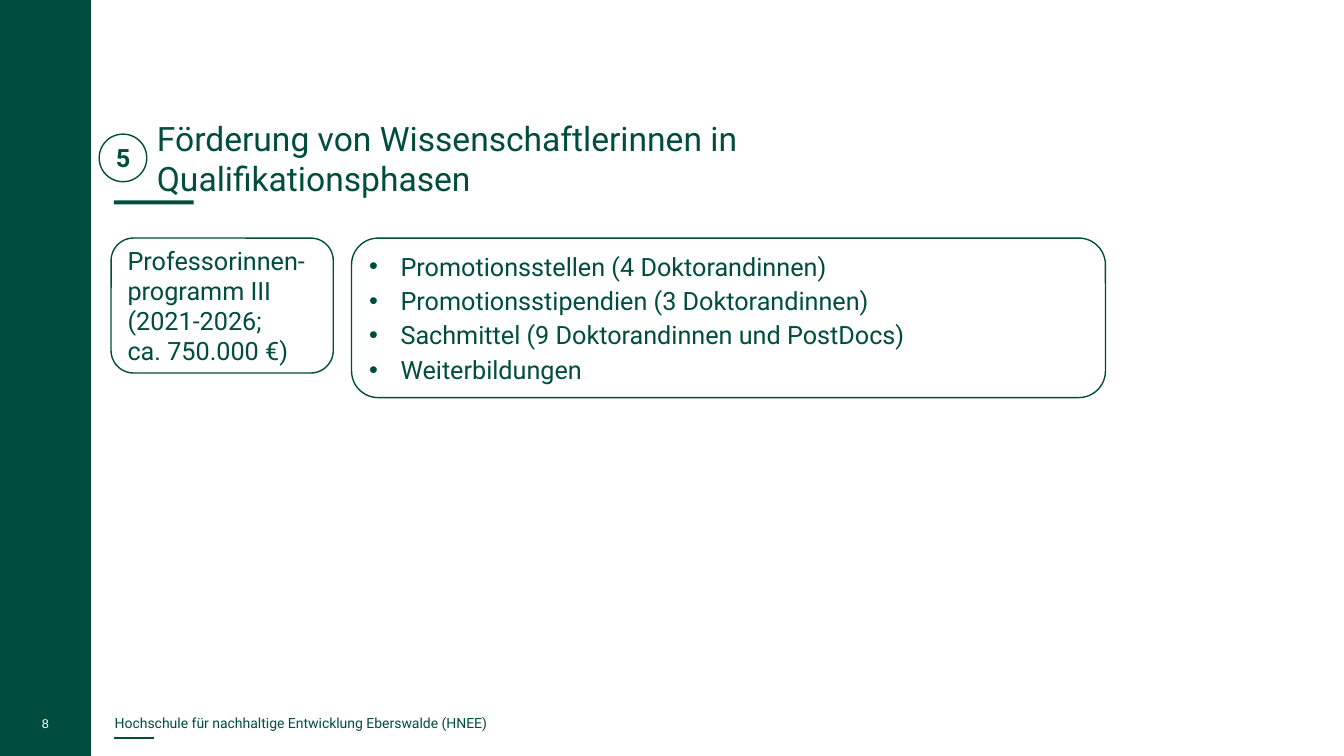
from pptx import Presentation
from pptx.dml.color import RGBColor
from pptx.enum.shapes import MSO_CONNECTOR, MSO_SHAPE
from pptx.enum.text import MSO_ANCHOR, PP_ALIGN
from pptx.oxml.ns import qn
from pptx.util import Cm, Pt
from lxml.etree import SubElement

GREEN = RGBColor(0x00, 0x4D, 0x3D)
WHITE = RGBColor(0xFF, 0xFF, 0xFF)

presentation = Presentation()
presentation.slide_width, presentation.slide_height = Cm(33.87), Cm(19.05)
slide = presentation.slides.add_slide(presentation.slide_layouts[6])


def add_box(kind, place, fill=None, line_width=None):
    shape = slide.shapes.add_shape(kind, *map(Cm, place))
    shape.shadow.inherit = False
    if fill is None:
        shape.fill.background()
    else:
        shape.fill.solid()
        shape.fill.fore_color.rgb = fill
    if line_width is None:
        shape.line.fill.background()
    else:
        shape.line.color.rgb = GREEN
        shape.line.width = Pt(line_width)
    return shape


def write(shape, lines, size, color=GREEN, font="Roboto", bold=False,
          align=PP_ALIGN.LEFT, anchor=MSO_ANCHOR.MIDDLE, bullets=False):
    frame = shape.text_frame
    frame.word_wrap = True
    frame.vertical_anchor = anchor
    frame.text = "\n".join(lines)
    for paragraph in frame.paragraphs:
        if bullets:
            properties = paragraph._p.get_or_add_pPr()
            properties.set("marL", str(Cm(0.79)))
            properties.set("indent", str(-Cm(0.79)))
            SubElement(properties, qn("a:buFont"), typeface="Arial")
            SubElement(properties, qn("a:buChar"), char="•")
            paragraph.space_after = Pt(3)
        paragraph.alignment = align
        for name, value in {"size": Pt(size), "name": font, "bold": bold}.items():
            setattr(paragraph.font, name, value)
        paragraph.font.color.rgb = color


# Frame of the page: side bar, footer and accent lines
add_box(MSO_SHAPE.RECTANGLE, (0, 0, 2.29, 19.05), fill=GREEN)
add_box(MSO_SHAPE.RECTANGLE, (2.87, 5.05, 2.01, 0.1), fill=GREEN)

footer = slide.shapes.add_textbox(Cm(2.64), Cm(17.88), Cm(15.19), Cm(0.69))
write(footer, ["Hochschule für nachhaltige Entwicklung Eberswalde (HNEE)"], 10,
      anchor=MSO_ANCHOR.TOP)

footer_line = slide.shapes.add_connector(
    MSO_CONNECTOR.STRAIGHT, Cm(2.87), Cm(18.59), Cm(3.89), Cm(18.59))
footer_line.line.color.rgb = GREEN
footer_line.line.width = Pt(1.5)
SubElement(footer_line._element.spPr, qn("a:effectLst"))

page_number = slide.shapes.add_textbox(Cm(0.23), Cm(17.91), Cm(1.83), Cm(0.64))
write(page_number, ["8"], 9, color=WHITE, font="Arial",
      align=PP_ALIGN.CENTER, anchor=MSO_ANCHOR.TOP)

# Heading with its number
title = add_box(MSO_SHAPE.ROUNDED_RECTANGLE, (3.61, 3, 23.01, 1.96))
write(title, ["Förderung von Wissenschaftlerinnen in Qualifikationsphasen"], 24)

number = add_box(MSO_SHAPE.OVAL, (2.5, 3.38, 1.2, 1.2), line_width=1)
write(number, ["5"], 18, bold=True, align=PP_ALIGN.CENTER)
for side in ("left", "top", "right", "bottom"):
    setattr(number.text_frame, f"margin_{side}", Cm(0.1))

# Programme and its measures
programme = add_box(MSO_SHAPE.ROUNDED_RECTANGLE, (2.8, 6, 5.6, 3.4), line_width=1)
write(programme, ["Professorinnen-programm III", "(2021-2026;", "ca. 750.000 €)"], 18)

measures = add_box(MSO_SHAPE.ROUNDED_RECTANGLE, (8.86, 6, 19, 4.02), line_width=1)
write(measures, [
    "Promotionsstellen (4 Doktorandinnen)",
    "Promotionsstipendien (3 Doktorandinnen)",
    "Sachmittel (9 Doktorandinnen und PostDocs)",
    "Weiterbildungen",
], 18, anchor=MSO_ANCHOR.TOP, bullets=True)

presentation.save("out.pptx")
